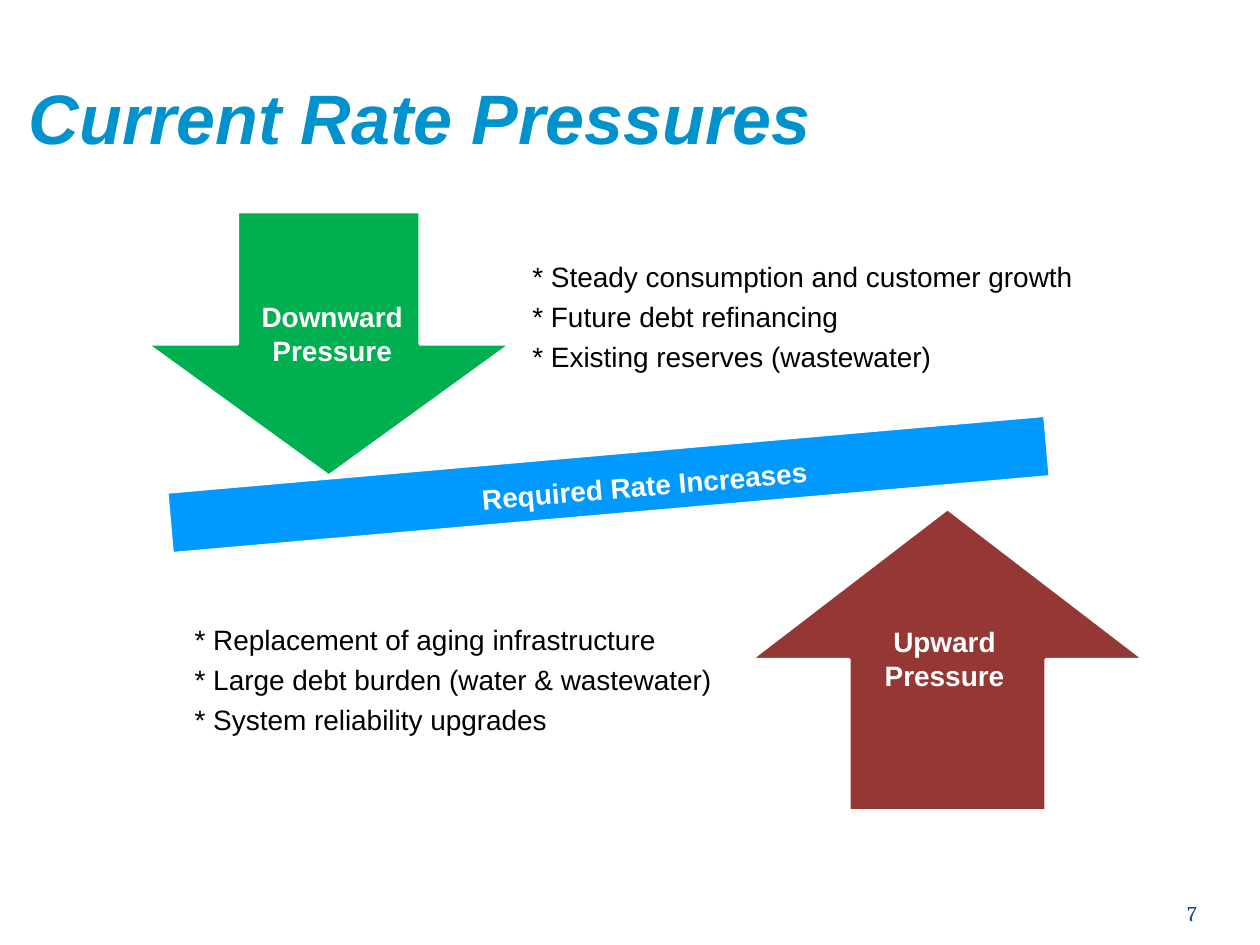
import pptx
import pptx.dml.color
import pptx.enum.shapes
import pptx.enum.text
import pptx.util

SHAPES = pptx.enum.shapes.MSO_SHAPE
ANCHOR = pptx.enum.text.MSO_ANCHOR
ALIGN = pptx.enum.text.PP_ALIGN
COLUMNS, ROWS = 100, 75
CELL = pptx.util.Inches(0.1)


def color(value):
    """Turn a hex string into a colour."""
    return pptx.dml.color.RGBColor.from_string(value)


def cells(*numbers):
    """Convert counts of grid cells into lengths."""
    return [round(number * CELL) for number in numbers]


def write(shape, lines, size, ink, font="Arial", bold=False, italic=False, align=ALIGN.LEFT,
          anchor=ANCHOR.TOP, insets=(1, 0.5, 1, 0.5), line_spacing=1.0, gap=0):
    """Fill a shape's text frame with evenly formatted paragraphs."""
    frame = shape.text_frame
    frame.word_wrap = True
    frame.auto_size = pptx.enum.text.MSO_AUTO_SIZE.NONE
    frame.vertical_anchor = anchor
    (frame.margin_left, frame.margin_top,
     frame.margin_right, frame.margin_bottom) = cells(*insets)
    frame.text = "\n".join(lines)
    for paragraph in frame.paragraphs:
        paragraph.alignment = align
        paragraph.line_spacing = line_spacing
        paragraph.space_before = pptx.util.Pt(0)
        paragraph.space_after = pptx.util.Pt(gap)
        paragraph.font.name = font
        paragraph.font.size = pptx.util.Pt(size)
        paragraph.font.bold = bold
        paragraph.font.italic = italic
        paragraph.font.color.rgb = color(ink)


def add_block(slide, kind, box, fill):
    """Add a filled preset shape with a white outline."""
    shape = slide.shapes.add_shape(kind, *cells(*box))
    shape.shadow.inherit = False
    shape.fill.solid()
    shape.fill.fore_color.rgb = color(fill)
    shape.line.color.rgb = color("FFFFFF")
    shape.line.width = pptx.util.Pt(2)
    return shape


def add_label(slide, box, text):
    """Add a centred bold white label."""
    label = slide.shapes.add_textbox(*cells(*box))
    write(label, [text], 16, "FFFFFF", bold=True, align=ALIGN.CENTER)
    return label


def place_title(slide, box, text):
    """Move and format the title placeholder."""
    title = slide.shapes.title
    title.left, title.top, title.width, title.height = cells(*box)
    write(title, [text], 40, "0092CC", bold=True, italic=True, anchor=ANCHOR.BOTTOM,
          insets=(0, 0.5, 0, 0), line_spacing=0.8)


def add_balance(slide, box, text):
    """Add the tilted bar and its label."""
    left, top, width, height = box
    bar = add_block(slide, SHAPES.MATH_MINUS, box, "0099FF")
    bar.rotation = 355
    label = add_label(slide, (left + 32.5, top + 8.7, width - 59.3, height - 17.2), text)
    label.rotation = 355.1


def add_pressure(slide, box, kind, fill, text, label_drop):
    """Add a large arrow with its label a number of rows below the arrow's top."""
    left, top, width, height = box
    add_block(slide, kind, box, fill)
    add_label(slide, (left + 0.28 * width, top + label_drop, 13.3, 6.4), text)


def add_reasons(slide, box, reasons):
    """Add a list of starred reasons."""
    text_box = slide.shapes.add_textbox(*cells(*box))
    write(text_box, [f"* {reason}" for reason in reasons], 16, "000000", anchor=ANCHOR.MIDDLE,
          insets=(1.2,) * 4, line_spacing=0.9, gap=5.6)


def add_page_number(slide, box, number):
    """Add the page number at the lower right."""
    text_box = slide.shapes.add_textbox(*cells(*box))
    write(text_box, [number], 12, "1D4577", font="Cambria", align=ALIGN.RIGHT,
          anchor=ANCHOR.BOTTOM, insets=(0,) * 4)


def main():
    """Build the rate pressures slide."""
    presentation = pptx.Presentation()
    presentation.slide_width, presentation.slide_height = cells(COLUMNS, ROWS)
    slide = presentation.slides.add_slide(presentation.slide_layouts[5])
    place_title(slide, (2.3, 0, 90, 12.5), "Current Rate Pressures")
    add_balance(slide, (0.7, 28, 95.2, 20.9), "Required Rate Increases")
    add_pressure(slide, (11.6, 16.8, 29, 21), SHAPES.DOWN_ARROW, "00B050",
                 "Downward Pressure", 6.5)
    add_reasons(slide, (41.05, 14.2, 48.9, 22.1),
                ["Steady consumption and customer growth", "Future debt refinancing",
                 "Existing reserves (wastewater)"])
    add_pressure(slide, (59.55, 40.35, 31.3, 24), SHAPES.UP_ARROW, "953735",
                 "Upward Pressure", 8.75)
    add_reasons(slide, (14.25, 43, 51, 22.1),
                ["Replacement of aging infrastructure", "Large debt burden (water & wastewater)",
                 "System reliability upgrades"])
    add_page_number(slide, (86.7, 69.5, 8.3, 4), "7")
    presentation.save("out.pptx")


if __name__ == "__main__":
    main()
